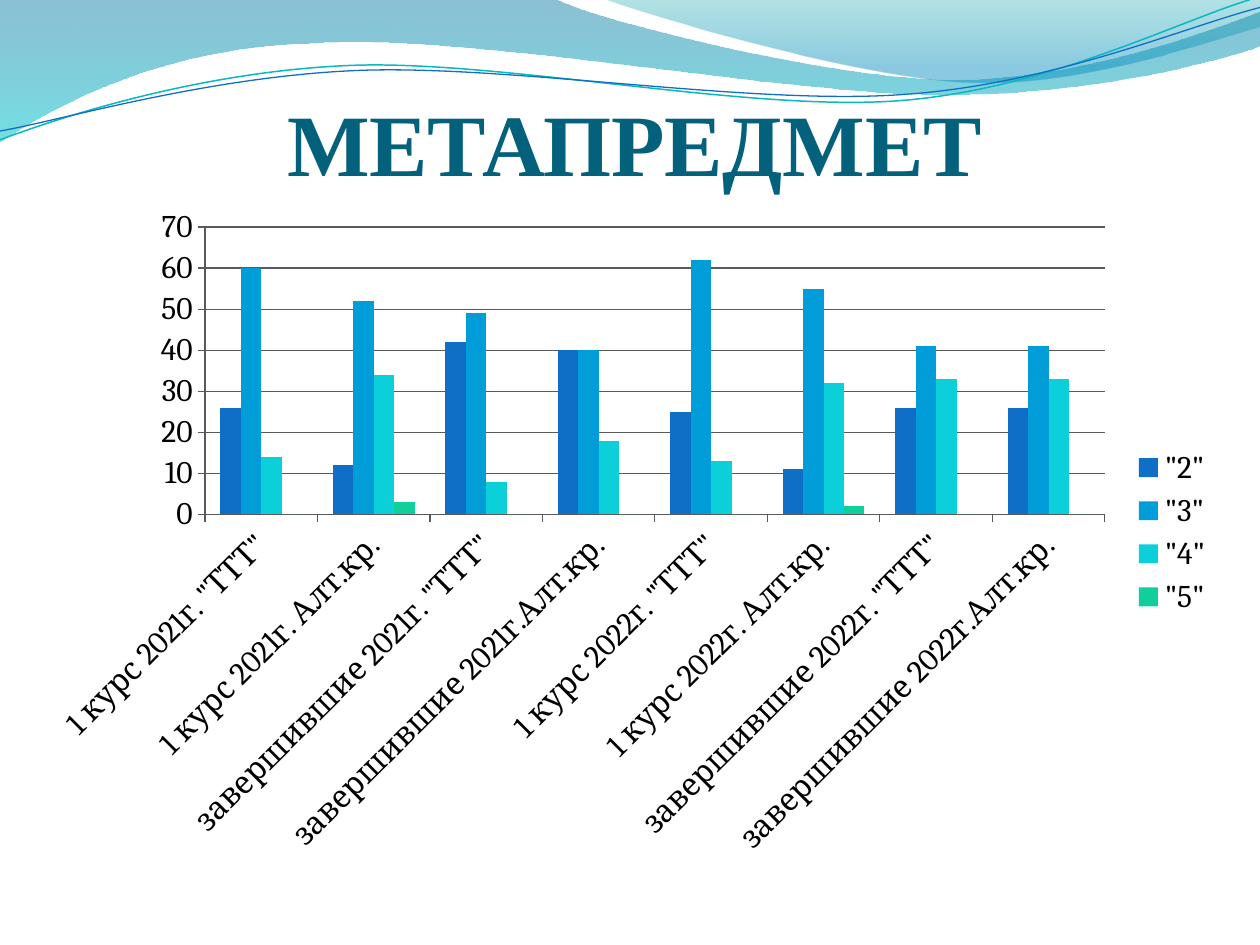
import math
from dataclasses import dataclass
from typing import Any, Optional

import pptx
import pptx.chart.data
import pptx.dml.color
import pptx.enum.chart
import pptx.enum.text
import pptx.oxml.ns
import pptx.util
from lxml import etree

W, H = 10, 7.5
COLORS = {
    "title": "04617B", "text": "000000", "grid": "595959",
    "blue": "0F6FC6", "sky": "009DD9", "aqua": "0BD0D9", "green": "10CF9B",
    "teal_line": "0AB8BF", "deep": "0074A1", "cyan": "00C6CF",
    "teal": "00A1A9", "azure": "008BBF",
}
FONT = "Cambria"
CURVE_STEPS = 24
WAVE_TILT = 357.3

Point = tuple[float, float]


@dataclass
class Stop:
    position: float
    color: str
    opacity: int


@dataclass
class Wave:
    """A segment holds one end point, or two control points and an end point."""
    start: Point
    segments: list[list[Point]]
    stops: Optional[list[Stop]] = None
    line: Optional[tuple[str, float]] = None
    tilt: float = 0


@dataclass
class Series:
    name: str
    values: list[int]
    color: str


WAVES = [
    Wave((0, 0), [
        [(4.4, -0.01)],
        [(4.76, 0.17), (6.64, 0.63), (7.58, 0.63)],
        [(8.53, 0.63), (9.58, 0.26), (10, 0.09)],
        [(10.01, 0.36)],
        [(9.83, 0.44), (8.7, 0.76), (7.46, 0.75)],
        [(6.22, 0.75), (3.82, 0.28), (2.57, 0.34)],
        [(1.29, 0.36), (0.46, 0.83), (-0.01, 1.13)],
        [(0, 0)],
    ], stops=[Stop(0, "deep", 45), Stop(1, "cyan", 55)]),
    Wave((4.79, -0.01), [
        [(5.09, 0.11), (6.82, 0.62), (7.69, 0.65)],
        [(8.56, 0.69), (9.61, 0.32), (10, 0.21)],
        [(10, 0)],
        [(4.79, -0.01)],
    ], stops=[Stop(0, "teal", 30), Stop(0.8, "azure", 45)]),
    Wave((0, 1.11), [
        [(0.48, 0.93), (1.58, 0.57), (2.77, 0.52)],
        [(3.95, 0.47), (5.93, 0.89), (7.13, 0.8)],
        [(8.33, 0.71), (9.38, 0.15), (9.98, -0.02)],
    ], line=("teal_line", 0.85), tilt=WAVE_TILT),
    Wave((0, 1.04), [
        [(0.47, 0.96), (1.64, 0.61), (2.83, 0.56)],
        [(4.03, 0.51), (5.97, 0.84), (7.17, 0.75)],
        [(8.36, 0.67), (9.41, 0.21), (10, 0.06)],
    ], line=("blue", 0.75), tilt=WAVE_TILT),
]

CATEGORIES = [
    '1 курс 2021г. "ТТТ"', "1 курс 2021г. Алт.кр.",
    'завершившие 2021г. "ТТТ"', "завершившие 2021г.Алт.кр.",
    '1 курс 2022г. "ТТТ"', "1 курс 2022г. Алт.кр.",
    'завершившие 2022г. "ТТТ"', "завершившие 2022г.Алт.кр.",
]
SERIES = [
    Series('"2"', [26, 12, 42, 40, 25, 11, 26, 26], "blue"),
    Series('"3"', [60, 52, 49, 40, 62, 55, 41, 41], "sky"),
    Series('"4"', [14, 34, 8, 18, 13, 32, 33, 33], "aqua"),
    Series('"5"', [0, 3, 0, 0, 0, 2, 0, 0], "green"),
]


def rgb(name: str) -> Any:
    return pptx.dml.color.RGBColor.from_string(COLORS[name])


def apply_format(obj: Any, values: dict[str, Any]) -> None:
    for name, value in values.items():
        setattr(obj, name, value)


def box(left: float, top: float, width: float, height: float) -> dict[str, Any]:
    """Position and size from shares of the slide."""
    names = ("left", "top", "width", "height")
    return {n: pptx.util.Inches(v * full) for n, v, full in
            zip(names, (left, top, width, height), (W, H, W, H))}


def turn(point: Point, degrees: float) -> Point:
    """Turn a point clockwise about the slide's top left corner."""
    c, n = math.cos(math.radians(degrees)), math.sin(math.radians(degrees))
    return point[0] * c - point[1] * n, point[0] * n + point[1] * c


def extent(start: Point, segments: list[list[Point]]) -> tuple[Point, Point]:
    """Top left and bottom right corners of the drawn curve."""
    points = [start]
    for segment in segments:
        ends = [points[-1], *segment]
        degree = len(segment)
        for step in range(1, CURVE_STEPS + 1):
            t = step / CURVE_STEPS
            weights = [math.comb(degree, i) * t**i * (1 - t)**(degree - i)
                       for i in range(degree + 1)]
            points.append(tuple(sum(w * e[axis] for w, e in zip(weights, ends))
                                for axis in (0, 1)))
    xs, ys = zip(*points)
    return (min(xs), min(ys)), (max(xs), max(ys))


def add_outline(s: Any, wave: Wave) -> Any:
    """Build the freeform and give it cubic curves."""
    start = turn(wave.start, -wave.tilt)
    segments = [[turn(p, -wave.tilt) for p in seg] for seg in wave.segments]
    (x0, y0), (x1, y1) = extent(start, segments)
    width, height = x1 - x0, y1 - y0
    cx, cy = turn(((x0 + x1) / 2, (y0 + y1) / 2), wave.tilt)

    emu = pptx.util.Inches
    builder = s.shapes.build_freeform(emu(start[0]), emu(start[1]))
    builder.add_line_segments([(emu(seg[-1][0]), emu(seg[-1][1])) for seg in segments],
                              close=wave.stops is not None)
    sp = builder.convert_to_shape()
    apply_format(sp, box((cx - width / 2) / W, (cy - height / 2) / H,
                         width / W, height / H))
    sp.rotation = wave.tilt

    qn = pptx.oxml.ns.qn
    curve = next(sp.element.spPr.iter(qn("a:path")))
    curve.set("w", str(emu(width)))
    curve.set("h", str(emu(height)))
    for step, points in zip(list(curve), [[start], *segments]):
        tag = "a:cubicBezTo" if len(points) == 3 else step.tag
        new = etree.Element(qn(tag) if len(points) == 3 else tag)
        for x, y in points:
            etree.SubElement(new, qn("a:pt"), x=str(emu(x - x0)), y=str(emu(y - y0)))
        curve.replace(step, new)
    return sp


def fill_gradient(sp: Any, stops: list[Stop]) -> None:
    sp.fill.gradient()
    sp.fill.gradient_angle = 270
    for target, stop in zip(sp.fill.gradient_stops, stops):
        target.position = stop.position
        target.color.rgb = rgb(stop.color)
    for color, stop in zip(sp.element.spPr.iter(pptx.oxml.ns.qn("a:srgbClr")), stops):
        alpha = etree.SubElement(color, pptx.oxml.ns.qn("a:alpha"))
        alpha.set("val", str(stop.opacity * 1000))


def draw_wave(s: Any, wave: Wave) -> None:
    sp = add_outline(s, wave)
    sp.shadow.inherit = False
    if wave.stops:
        fill_gradient(sp, wave.stops)
        sp.line.fill.background()
    else:
        color, width = wave.line
        sp.fill.background()
        sp.line.color.rgb = rgb(color)
        sp.line.width = pptx.util.Pt(width)


def write_title(s: Any, text: str) -> None:
    sp = s.shapes.title
    apply_format(sp, box(0.5 / W, 0.36 / H, 9.08 / W, 1.18 / H))
    tf = sp.text_frame
    apply_format(tf, {"margin_left": 0, "margin_right": 0, "margin_bottom": 0,
                      "margin_top": pptx.util.Inches(0.05), "word_wrap": True,
                      "vertical_anchor": pptx.enum.text.MSO_ANCHOR.BOTTOM})
    p = tf.paragraphs[0]
    p.alignment = pptx.enum.text.PP_ALIGN.CENTER
    r = p.add_run()
    r.text = text
    apply_format(r.font, {"size": pptx.util.Pt(50), "bold": True,
                          "name": "Times New Roman"})
    r.font.color.rgb = rgb("title")


def draw_chart(s: Any) -> None:
    data = pptx.chart.data.CategoryChartData()
    data.categories = CATEGORIES
    for series in SERIES:
        data.add_series(series.name, series.values)
    place = box(0.28 / W, 1.55 / H, 9.45 / W, 5.35 / H)
    chart = s.shapes.add_chart(pptx.enum.chart.XL_CHART_TYPE.COLUMN_CLUSTERED,
                               *place.values(), data).chart
    apply_format(chart, {"has_title": False, "has_legend": True})
    apply_format(chart.legend, {"position": pptx.enum.chart.XL_LEGEND_POSITION.RIGHT,
                                "include_in_layout": False})
    apply_format(chart.font, {"size": pptx.util.Pt(18), "name": FONT})
    chart.font.color.rgb = rgb("text")
    plot = chart.plots[0]
    apply_format(plot, {"gap_width": 150, "overlap": 0, "vary_by_categories": False})
    for bars, series in zip(plot.series, SERIES):
        bars.format.fill.solid()
        bars.format.fill.fore_color.rgb = rgb(series.color)
    value_axis, category_axis = chart.value_axis, chart.category_axis
    apply_format(value_axis, {"minimum_scale": 0, "maximum_scale": 70,
                              "major_unit": 10, "has_major_gridlines": True})
    for axis in (category_axis, value_axis):
        axis.major_tick_mark = pptx.enum.chart.XL_TICK_MARK.OUTSIDE
    for part in (category_axis, value_axis, value_axis.major_gridlines):
        part.format.line.color.rgb = rgb("grid")
        part.format.line.width = pptx.util.Pt(0.75)


def main() -> None:
    prs = pptx.Presentation()
    prs.slide_width, prs.slide_height = pptx.util.Inches(W), pptx.util.Inches(H)
    s = prs.slides.add_slide(prs.slide_layouts[5])
    for wave in WAVES:
        draw_wave(s, wave)
    write_title(s, "МЕТАПРЕДМЕТ")
    draw_chart(s)
    prs.save("out.pptx")


if __name__ == "__main__":
    main()
